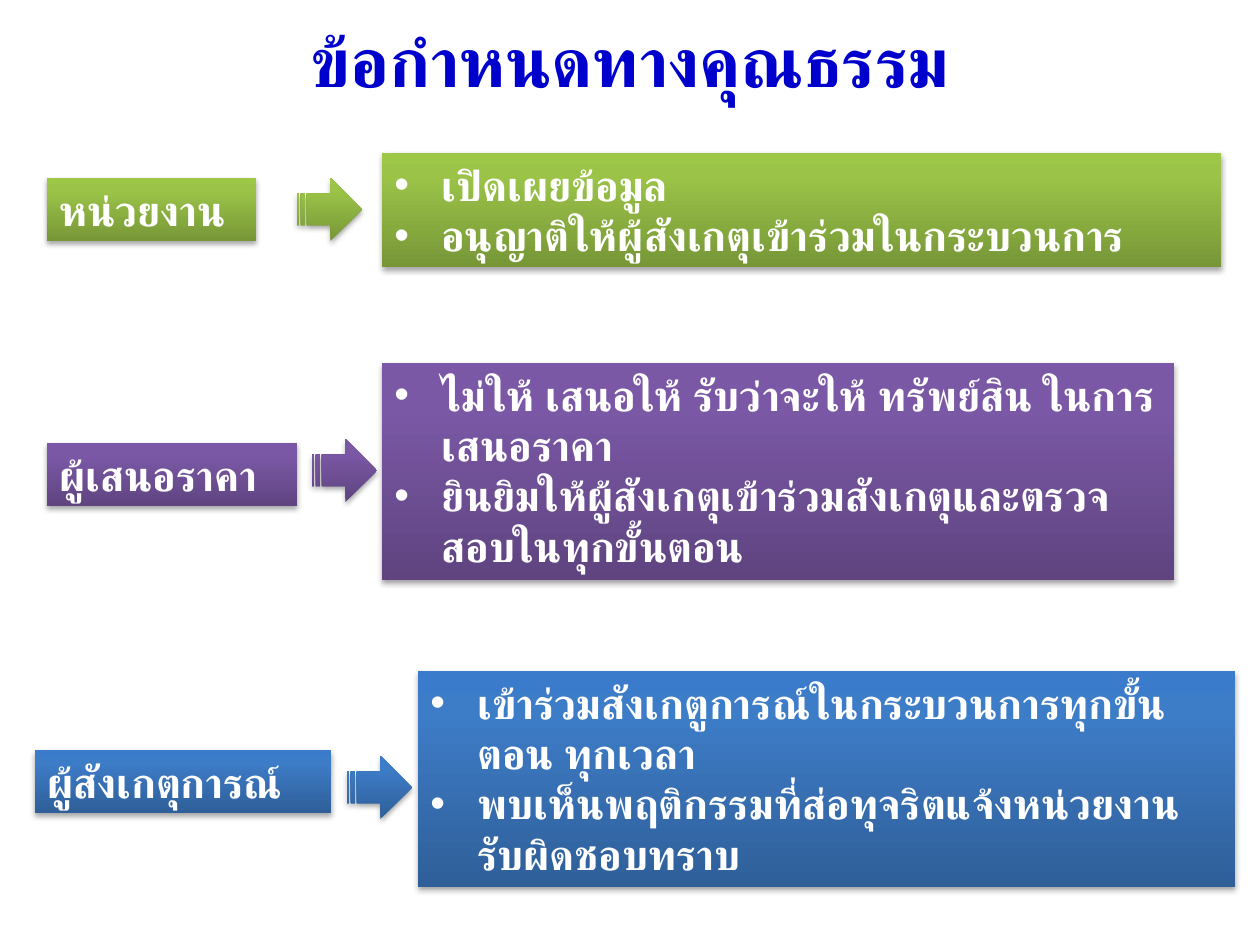
from dataclasses import dataclass

from lxml.etree import SubElement
from pptx import Presentation
from pptx.dml.color import RGBColor
from pptx.enum.shapes import MSO_SHAPE
from pptx.enum.text import MSO_ANCHOR, MSO_AUTO_SIZE, PP_ALIGN
from pptx.oxml import parse_xml
from pptx.oxml.ns import nsdecls, qn
from pptx.util import Pt

EMU_PER_PX = 914400 / 126


@dataclass(frozen=True)
class Theme:
    font: str = "Karla"
    title_size: float = 39.6
    body_size: float = 24
    title_color: str = "0000CC"
    text_color: str = "FFFFFF"
    # Gradient stops from bottom to top
    green: tuple = ((0, "779737"), (80, "9BC348"), (100, "9DC746"))
    purple: tuple = ((0, "5F4480"), (80, "7B58A6"), (100, "7C57A8"))
    blue: tuple = ((0, "2F5F99"), (80, "3D7CC7"), (100, "3A7CCB"))


THEME = Theme()
TITLE = "ข้อกำหนดทางคุณธรรม"
TITLE_BOX = (63, 16, 1134, 87)
INDENT = 47

# Boxes are left, top, width, height in px; arrows share one size.
ARROW_SIZE = (65, 63)
PARTIES = [
    {
        "name": "หน่วยงาน",
        "duties": ["เปิดเผยข้อมูล", "อนุญาติให้ผู้สังเกตุเข้าร่วมในกระบวนการ"],
        "stops": THEME.green,
        "name_box": (47, 178, 209, 63),
        "arrow_at": (297, 178),
        "duties_box": (382, 153, 839, 114),
    },
    {
        "name": "ผู้เสนอราคา",
        "duties": [
            "ไม่ให้ เสนอให้ รับว่าจะให้ ทรัพย์สิน ในการเสนอราคา",
            "ยินยิมให้ผู้สังเกตุเข้าร่วมสังเกตุและตรวจสอบในทุกขั้นตอน",
        ],
        "stops": THEME.purple,
        "name_box": (47, 443, 250, 63),
        "arrow_at": (312, 439),
        "duties_box": (382, 363, 792, 217),
    },
    {
        "name": "ผู้สังเกตุการณ์",
        "duties": [
            "เข้าร่วมสังเกตูการณ์ในกระบวนการทุกขั้นตอน ทุกเวลา",
            "พบเห็นพฤติกรรมที่ส่อทุจริตแจ้งหน่วยงานรับผิดชอบทราบ",
        ],
        "stops": THEME.blue,
        "name_box": (35, 750, 296, 63),
        "arrow_at": (347, 756),
        "duties_box": (418, 671, 817, 216),
    },
]


def px(length):
    return round(length * EMU_PER_PX)


def style_text(paragraph, size, color, align):
    paragraph.alignment = align
    for run in paragraph.runs:
        font = run.font
        font.name, font.size, font.bold = THEME.font, Pt(size), True
        font.color.rgb = RGBColor.from_string(color)
        # Thai is drawn with the complex-script font
        SubElement(font._element, qn("a:cs"), typeface=THEME.font)


def add_bullet(paragraph):
    properties = paragraph._p.get_or_add_pPr()
    properties.set("marL", str(px(INDENT)))
    properties.set("indent", str(-px(INDENT)))
    SubElement(properties, qn("a:buFont"), typeface="Arial")
    SubElement(properties, qn("a:buChar"), char="•")


def add_glossy_shape(slide, kind, box, stops):
    """Add a borderless shape with a vertical gradient and a soft shadow."""
    shape = slide.shapes.add_shape(kind, *map(px, box))
    shape.line.fill.background()
    shape.fill.gradient()
    gradient = shape._element.spPr.find(qn("a:gradFill"))
    stop_xml = "".join(
        f'<a:gs pos="{percent * 1000}"><a:srgbClr val="{color}"/></a:gs>'
        for percent, color in stops
    )
    gradient.getparent().replace(gradient, parse_xml(
        f'<a:gradFill {nsdecls("a")} rotWithShape="1"><a:gsLst>{stop_xml}</a:gsLst>'
        '<a:lin ang="16200000" scaled="0"/></a:gradFill>'
    ))
    shape.shadow.inherit = False
    shape._element.spPr.find(qn("a:effectLst")).append(parse_xml(
        f'<a:outerShdw {nsdecls("a")} blurRad="40000" dist="23000" dir="5400000"'
        ' rotWithShape="0"><a:srgbClr val="000000"><a:alpha val="35000"/>'
        '</a:srgbClr></a:outerShdw>'
    ))
    return shape


def add_panel(slide, box, lines, stops, bulleted=False):
    frame = add_glossy_shape(slide, MSO_SHAPE.RECTANGLE, box, stops).text_frame
    frame.text = "\n".join(lines)
    frame.word_wrap = True
    frame.auto_size = MSO_AUTO_SIZE.SHAPE_TO_FIT_TEXT
    frame.vertical_anchor = MSO_ANCHOR.TOP
    for paragraph in frame.paragraphs:
        style_text(paragraph, THEME.body_size, THEME.text_color, PP_ALIGN.LEFT)
        if bulleted:
            add_bullet(paragraph)


def add_title(slide):
    title = slide.shapes.title
    title.left, title.top, title.width, title.height = map(px, TITLE_BOX)
    frame = title.text_frame
    frame.text = TITLE
    frame.auto_size = MSO_AUTO_SIZE.NONE
    frame.vertical_anchor = MSO_ANCHOR.MIDDLE
    style_text(frame.paragraphs[0], THEME.title_size, THEME.title_color, PP_ALIGN.CENTER)


def main():
    presentation = Presentation()
    presentation.slide_width, presentation.slide_height = px(1260), px(945)
    slide = presentation.slides.add_slide(presentation.slide_layouts[5])
    add_title(slide)
    for party in PARTIES:
        add_panel(slide, party["duties_box"], party["duties"], party["stops"], bulleted=True)
    for party in PARTIES:
        add_panel(slide, party["name_box"], [party["name"]], party["stops"])
    for party in PARTIES:
        add_glossy_shape(slide, MSO_SHAPE.STRIPED_RIGHT_ARROW,
                         party["arrow_at"] + ARROW_SIZE, party["stops"])
    presentation.save("out.pptx")


if __name__ == "__main__":
    main()
